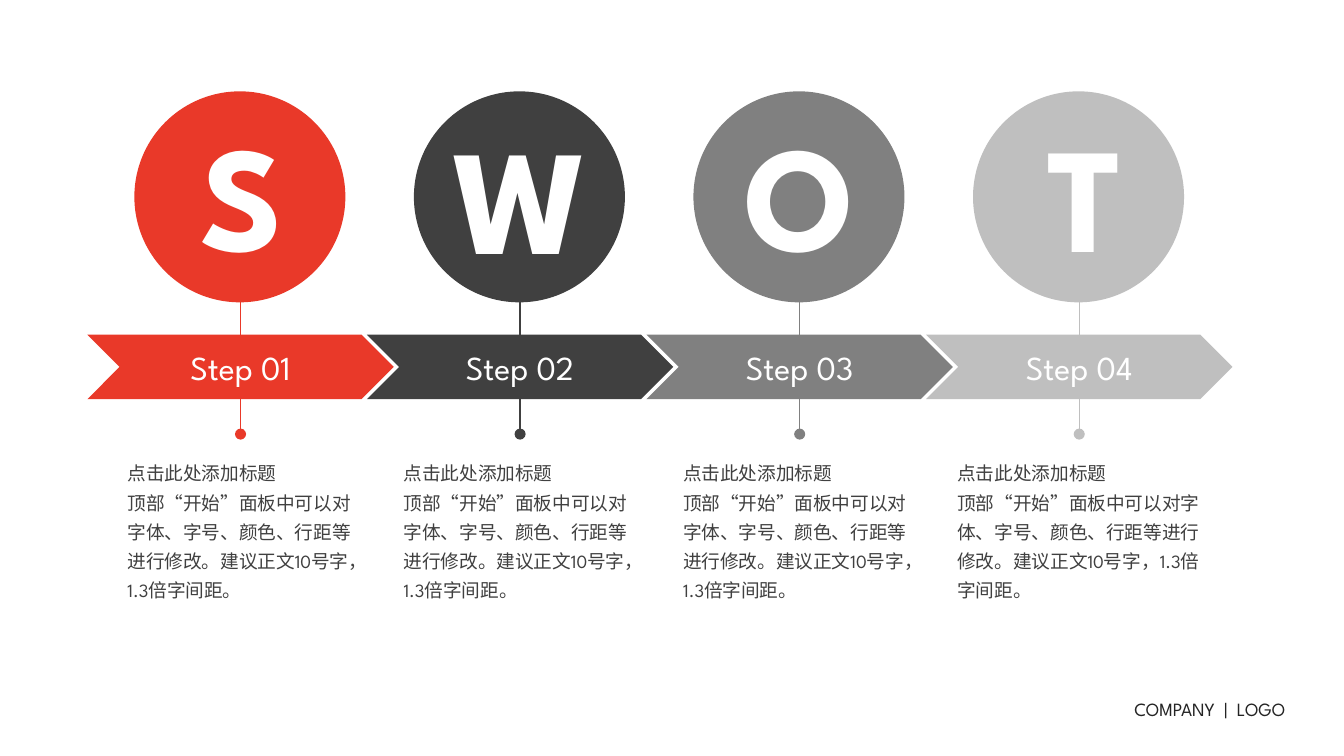
import pptx
import pptx.util
import pptx.dml.color
import pptx.enum.shapes
import pptx.enum.text
import pptx.oxml

UNIT = 9144
FONT = "League Spartan"
SPACE = "http://schemas.openxmlformats.org/drawingml/2006/main"
HEAD = "点击此处添加标题"
BODY = "顶部“开始”面板中可以对字体、字号、颜色、行距等进行修改。建议正文10号字，1.3倍字间距。"
STEPS = [
    ("S", "E93929", 71, 79, 188),
    ("W", "404040", 73, 121, 193),
    ("O", "808080", 71, 114, 193),
    ("T", "BFBFBF", 72, 67, 201),
]
PITCH = 208

SHAPE = pptx.enum.shapes.MSO_SHAPE
ALIGN = pptx.enum.text.PP_ALIGN


def px(*nums):
    return [pptx.util.Emu(round(num * UNIT)) for num in nums]


def tint(code):
    return pptx.dml.color.RGBColor.from_string(code)


def write(frame, *lines, size=10, color="404040", bold=False, align=None, space=None):
    for i, line in enumerate(lines):
        para = frame.paragraphs[0] if i == 0 else frame.add_paragraph()
        para.alignment = align
        para.line_spacing = space
        run = para.add_run()
        run.text = line
        run.font.size = pptx.util.Pt(size)
        run.font.name = FONT
        run.font.bold = bold
        run.font.color.rgb = tint(color)


def label(slide, box, *lines, wrap=True, **form):
    frame = slide.shapes.add_textbox(*px(*box)).text_frame
    frame.word_wrap = wrap
    frame.auto_size = pptx.enum.text.MSO_AUTO_SIZE.SHAPE_TO_FIT_TEXT
    write(frame, *lines, **form)


def solid(slide, kind, box, color):
    shape = slide.shapes.add_shape(kind, *px(*box))
    shape.shadow.inherit = False
    shape.fill.solid()
    shape.fill.fore_color.rgb = tint(color)
    shape.line.fill.background()
    return shape


def stem(slide, x, top, end, color):
    line = slide.shapes.add_connector(
        pptx.enum.shapes.MSO_CONNECTOR.STRAIGHT, *px(x, top, x, end))
    line.line.color.rgb = tint(color)
    line.line.width = pptx.util.Pt(0.75)
    props = line._element.spPr
    props.get_or_add_ln().append(
        pptx.oxml.parse_xml(f'<a:tailEnd xmlns:a="{SPACE}" type="oval"/>'))
    props.append(pptx.oxml.parse_xml(f'<a:effectLst xmlns:a="{SPACE}"/>'))


def column(slide, box, step, mark, color, rise, span, wide):
    left, top, width, height = box
    mid = left + width / 2
    stem(slide, mid, top + 124, top + 255, color)
    solid(slide, SHAPE.OVAL, (mid - 79, top, 157, 157), color)
    band = solid(slide, SHAPE.CHEVRON, (left, top + 181, width, 48), color)
    band.text_frame.vertical_anchor = pptx.enum.text.MSO_ANCHOR.MIDDLE
    write(band.text_frame, step, size=18, color="FFFFFF", align=ALIGN.CENTER)
    label(slide, (mid - wide / 2, top + height - 117, wide, 117),
          HEAD, BODY, space=1.3)
    label(slide, (mid - span / 2, rise, span, 145), mark, wrap=False,
          size=80, color="FFFFFF", bold=True, align=ALIGN.CENTER)


def footer(slide, box):
    label(slide, box, "COMPANY  |  LOGO", color="242424", align=ALIGN.RIGHT, space=1.3)


def main():
    deck = pptx.Presentation()
    deck.slide_width, deck.slide_height = px(1000, 562.5)
    slide = deck.slides.add_slide(deck.slide_layouts[6])
    for i, (mark, color, rise, span, wide) in enumerate(STEPS):
        box = (65 + PITCH * i, 68, 228, 383)
        column(slide, box, f"Step {i + 1:02}", mark, color, rise, span, wide)
    footer(slide, (761, 509, 205, 31))
    deck.save("out.pptx")


if __name__ == "__main__":
    main()
